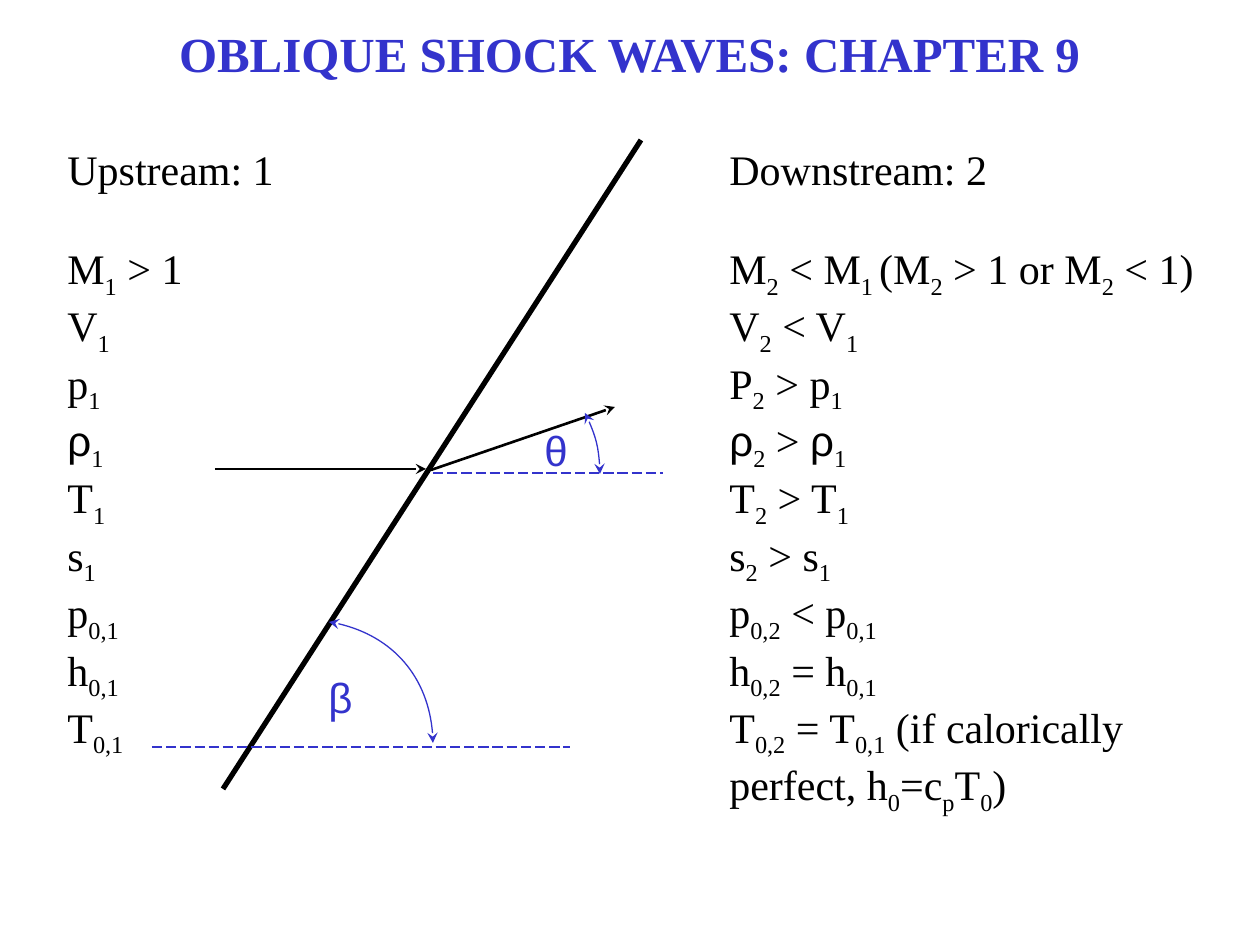
from itertools import groupby
from typing import NamedTuple

from lxml.etree import SubElement
from pptx import Presentation
from pptx.dml.color import RGBColor
from pptx.enum.dml import MSO_LINE_DASH_STYLE as Dash
from pptx.enum.shapes import MSO_CONNECTOR as Conn
from pptx.enum.text import MSO_ANCHOR as Anchor, MSO_AUTO_SIZE as Auto, PP_ALIGN as Align
from pptx.oxml.ns import qn
from pptx.util import Pt

PX = 914400 // 126
COLORS = {"ink": "000000", "accent": "3333CC"}
GREEK = "ρβθ"


class Line(NamedTuple):
    start: tuple[int, int]
    end: tuple[int, int]
    color: str
    width: float
    dashed: bool = False
    arrow: bool = False


class Arc(NamedTuple):
    points: list[tuple[int, int]]


class Text(NamedTuple):
    box: tuple[int, int, int, int]
    heading: str
    rows: list[str]
    color: str = "ink"
    wrap: bool = True


LINES = [
    Line((641, 140), (223, 789), "ink", 3),
    Line((215, 469), (426, 469), "ink", 1.5, arrow=True),
    Line((431, 470), (615, 407), "ink", 1.5, arrow=True),
    Line((152, 747), (570, 747), "accent", 0.75, dashed=True),
    Line((433, 473), (663, 473), "accent", 0.75, dashed=True),
]
ARCS = [
    Arc([(433, 743), (433, 683), (389, 631), (329, 622)]),
    Arc([(600, 474), (600, 454), (595, 432), (585, 413)]),
]
TEXTS = [
    Text((55, 137, 243, 566), "Upstream: 1", [
        "M~1~ > 1", "V~1~", "p~1~", "ρ~1~", "T~1~", "s~1~", "p~0,1~", "h~0,1~", "T~0,1~",
    ]),
    Text((717, 137, 508, 616), "Downstream: 2", [
        "M~2~ < M~1 ~(M~2~ > 1 or M~2~ < 1)",
        "V~2~ < V~1~",
        "P~2~ > p~1~",
        "ρ~2~ > ρ~1~",
        "T~2~ > T~1~",
        "s~2~ > s~1~",
        "p~0,2~ < p~0,1~",
        "h~0,2~ = h~0,1~",
        "T~0,2~ = T~0,1~ (if calorically perfect, h~0~=c~p~T~0~)",
    ]),
    Text((316, 665, 48, 63), "β", [], "accent", False),
    Text((532, 418, 48, 63), "θ", [], "accent", False),
]


def emu(*values: int) -> list[int]:
    return [v * PX for v in values]


def rgb(name: str) -> RGBColor:
    return RGBColor.from_string(COLORS[name])


def add_runs(p, text: str, *, color: str, size: int = 24, bold: bool = False) -> None:
    for i, part in enumerate(text.split("~")):
        for is_greek, chars in groupby(part, key=lambda c: c in GREEK):
            r = p.add_run()
            r.text = "".join(chars)
            r.font.name = "Arial" if is_greek else "Times New Roman"
            r.font.size = Pt(size)
            r.font.bold = bold
            r.font.color.rgb = rgb(color)
            if i % 2:
                r.font._element.set("baseline", "-25000")


def add_text(s, item: Text) -> None:
    tf = s.shapes.add_textbox(*emu(*item.box)).text_frame
    tf.word_wrap = item.wrap
    tf.auto_size = Auto.SHAPE_TO_FIT_TEXT
    add_runs(tf.paragraphs[0], item.heading, color=item.color)
    for i, row in enumerate(item.rows):
        p = tf.add_paragraph()
        if i == 0:
            p.space_before = Pt(28)
        add_runs(p, row, color=item.color)


def style_line(sp, *, color: str, width: float, ends: tuple[str, ...] = ()) -> None:
    sp.line.color.rgb = rgb(color)
    sp.line.width = Pt(width)
    ln = sp.line._get_or_add_ln()
    for end in ends:
        SubElement(ln, qn(f"a:{end}"), type="stealth")


def add_line(s, item: Line) -> None:
    sp = s.shapes.add_connector(Conn.STRAIGHT, *emu(*item.start, *item.end))
    if item.dashed:
        sp.line.dash_style = Dash.LONG_DASH
    ends = ("tailEnd",) if item.arrow else ()
    style_line(sp, color=item.color, width=item.width, ends=ends)
    SubElement(sp._element.spPr, qn("a:effectLst"))


def add_arc(s, item: Arc) -> None:
    builder = s.shapes.build_freeform(*item.points[0], scale=PX)
    builder.add_line_segments(item.points[1:], close=False)
    sp = builder.convert_to_shape()
    outline = next(sp._element.iter(qn("a:path")))
    segments = outline.findall(qn("a:lnTo"))
    curve = SubElement(outline, qn("a:cubicBezTo"))
    for segment in segments:
        curve.append(segment[0])
        outline.remove(segment)
    sp.fill.background()
    sp.shadow.inherit = False
    style_line(sp, color="accent", width=0.75, ends=("headEnd", "tailEnd"))


def add_title(s, text: str) -> None:
    sp = s.shapes.title
    sp.left, sp.top, sp.width, sp.height = emu(26, 21, 1207, 63)
    tf = sp.text_frame
    tf.vertical_anchor = Anchor.MIDDLE
    p = tf.paragraphs[0]
    p.alignment = Align.CENTER
    add_runs(p, text, color="accent", size=28, bold=True)


def main() -> None:
    prs = Presentation()
    prs.slide_width, prs.slide_height = emu(1260, 945)
    s = prs.slides.add_slide(prs.slide_layouts[5])
    add_title(s, "OBLIQUE SHOCK WAVES: CHAPTER 9")
    for line in LINES:
        add_line(s, line)
    for text in TEXTS:
        add_text(s, text)
    for arc in ARCS:
        add_arc(s, arc)
    prs.save("out.pptx")


if __name__ == "__main__":
    main()
